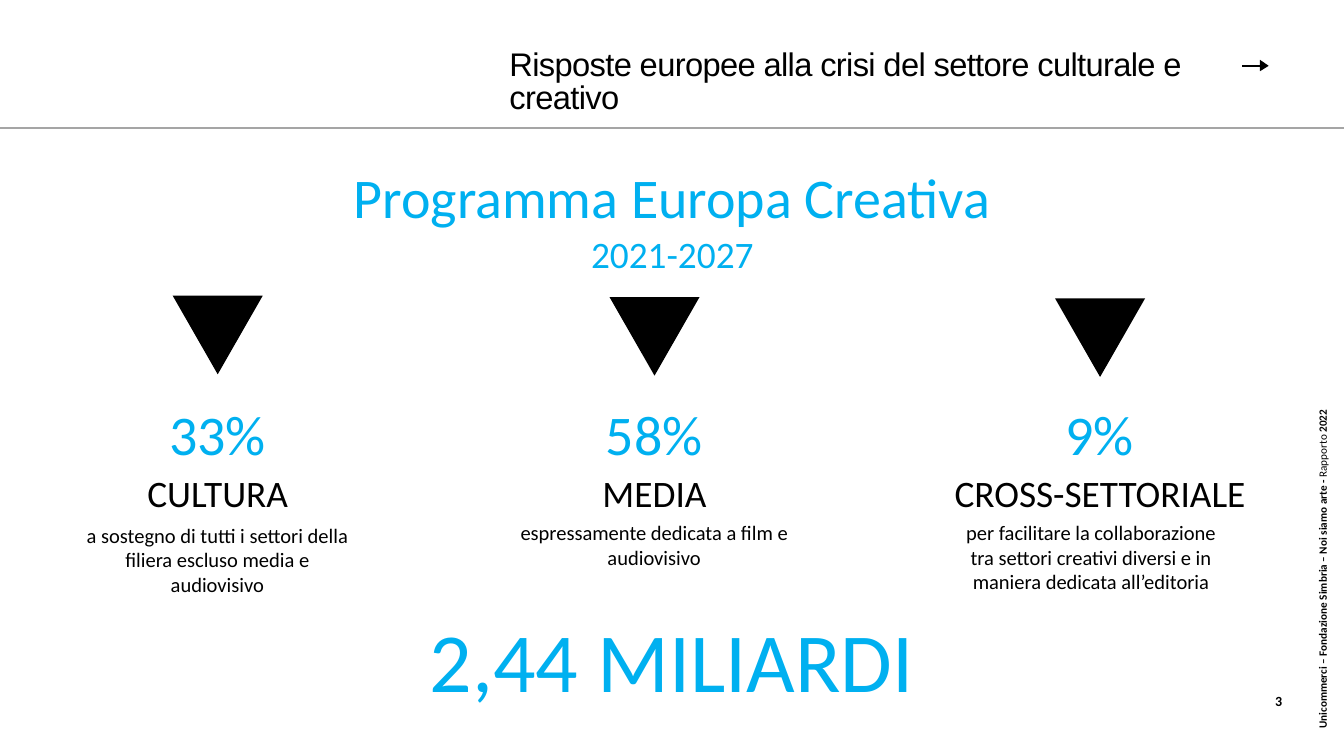
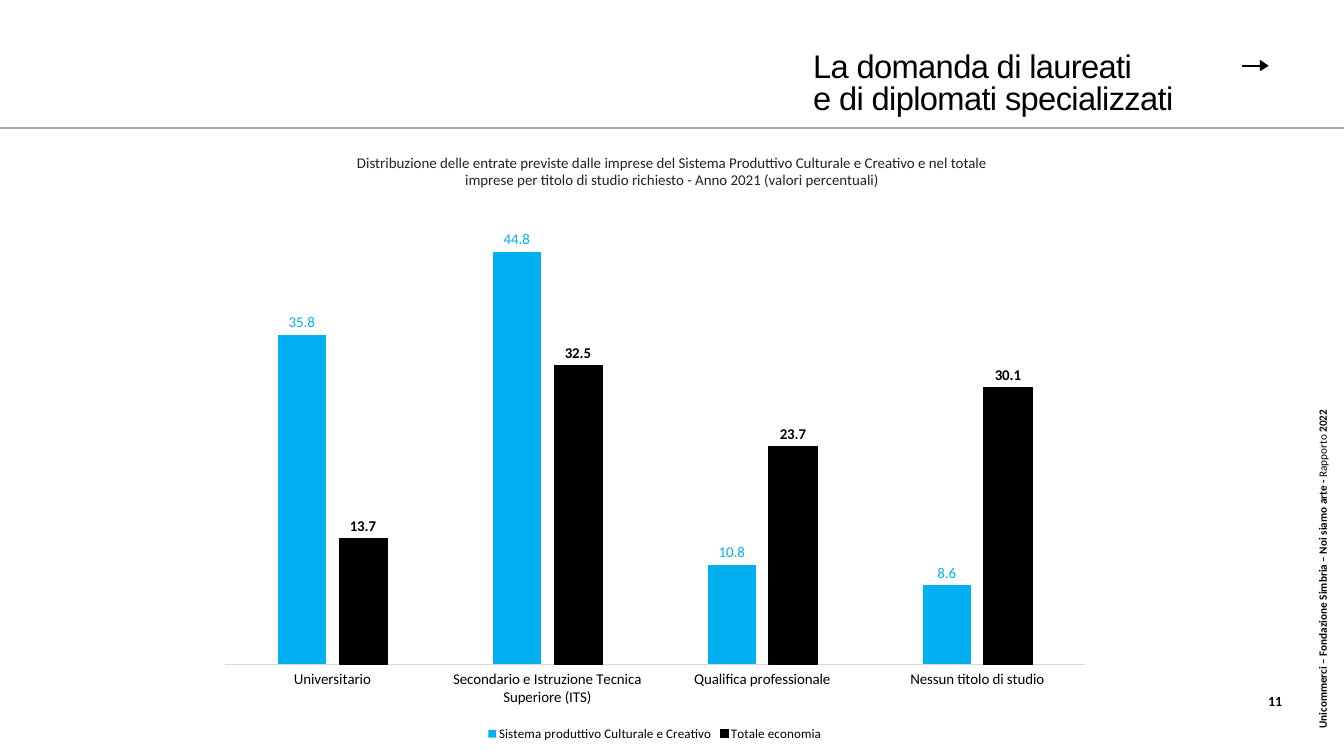
from pptx import Presentation
from pptx.chart.data import CategoryChartData
from pptx.dml.color import RGBColor
from pptx.enum.chart import XL_CHART_TYPE, XL_LABEL_POSITION, XL_LEGEND_POSITION, XL_TICK_LABEL_POSITION, XL_TICK_MARK
from pptx.enum.shapes import MSO_SHAPE
from pptx.enum.text import MSO_ANCHOR, MSO_AUTO_SIZE, PP_ALIGN
from pptx.util import Inches, Pt

BLACK = RGBColor(0x00, 0x00, 0x00)
CYAN = RGBColor(0x00, 0xB0, 0xF0)
DARK_GREY = RGBColor(0x22, 0x22, 0x22)
LIGHT_GREY = RGBColor(0xD9, 0xD9, 0xD9)
TITLE_FONT, BODY_FONT = "Arial", "Calibri"
LEFT, CENTER, RIGHT = PP_ALIGN.LEFT, PP_ALIGN.CENTER, PP_ALIGN.RIGHT
TITLE_ONLY = 5


def add_text(slide, box, runs, size, color=BLACK, align=CENTER):
    """Add a text box of one paragraph; runs holds (text, bold) pairs."""
    holder = slide.shapes.add_textbox(*map(Inches, box))
    frame = holder.text_frame
    frame.word_wrap = True
    frame.auto_size = MSO_AUTO_SIZE.SHAPE_TO_FIT_TEXT
    paragraph = frame.paragraphs[0]
    paragraph.alignment = align
    for text, bold in runs:
        run = paragraph.add_run()
        run.text = text
        for name, value in {"name": BODY_FONT, "size": Pt(size), "bold": bold}.items():
            setattr(run.font, name, value)
        run.font.color.rgb = color
    return holder


def add_outline(shapes, points):
    """Add a closed black freeform through points given in inches."""
    start, *rest = [(Inches(x), Inches(y)) for x, y in points]
    builder = shapes.build_freeform(*start, scale=1.0)
    builder.add_line_segments(rest, close=True)
    outline = builder.convert_to_shape()
    outline.shadow.inherit = False
    outline.fill.solid()
    outline.fill.fore_color.rgb = BLACK
    outline.line.fill.background()
    return outline


prs = Presentation()
prs.slide_width, prs.slide_height = Inches(20), Inches(11.25)

# Shared frame: title, rule, arrow, page number and side footer
headings = [
    ("Risposte europee alla crisi del settore culturale e creativo", (7.58, 0.76, 10.64, 0.98), "3"),
    ("La domanda di laureati\ne di diplomati specializzati", (12.1, 0.78, 6.23, 0.98), "11"),
]
slides = []
for heading, title_box, page in headings:
    slide = prs.slides.add_slide(prs.slide_layouts[TITLE_ONLY])
    slides.append(slide)

    title = slide.shapes.title
    title.left, title.top, title.width, title.height = map(Inches, title_box)
    frame = title.text_frame
    frame.text = heading
    frame.word_wrap = True
    frame.auto_size = MSO_AUTO_SIZE.NONE
    frame.vertical_anchor = MSO_ANCHOR.TOP
    for side in ("left", "top", "right", "bottom"):
        setattr(frame, f"margin_{side}", 0)
    for paragraph in frame.paragraphs:
        paragraph.alignment = LEFT
        paragraph.line_spacing = Pt(34.6)
        run = paragraph.runs[0]
        run.font.name, run.font.size = TITLE_FONT, Pt(35)
        run.font.color.rgb = BLACK
        run.font._element.set("spc", "-70")

    rule = slide.shapes.add_shape(MSO_SHAPE.RECTANGLE, 0, Inches(1.9), prs.slide_width, Inches(0.01))
    rule.shadow.inherit = False
    rule.fill.solid()
    rule.fill.fore_color.rgb = BLACK
    rule.line.fill.background()

    arrow = slide.shapes.add_group_shape()
    add_outline(arrow.shapes, [(18.48, 0.97), (18.77, 0.97), (18.77, 0.99), (18.48, 0.99)])
    add_outline(arrow.shapes, [(18.75, 1.06), (18.75, 0.89), (18.88, 0.98)])

    add_text(slide, (9.62, 10.26, 9.56, 0.35), [(page, True)], 15, align=RIGHT)
    footer = add_text(
        slide, (14.45, 5.56, 10.46, 0.3),
        [("Unicommerci – Fondazione Simbria – Noi siamo arte - ", True), ("Rapporto", False), (" 2022", True)],
        12, align=LEFT)
    footer.rotation = 270

programme, demand = slides

# Slide 1: the programme and its three strands
for text, box, size in [
    ("Programma Europa Creativa", (4, 2.37, 12, 1.11), 60),
    ("2021-2027", (7.46, 3.39, 5.09, 0.77), 40),
    ("2,44 MILIARDI", (4, 9, 12, 1.62), 90),
]:
    add_text(programme, box, [(text, False)], size, CYAN)

strands = [
    (3.24, 4.4, "33%", "CULTURA", 3.03, 7.73, 1.21,
     "a sostegno di tutti i settori della filiera escluso media e audiovisivo"),
    (9.74, 4.42, "58%", "MEDIA", 3.03, 7.69, 0.84,
     "espressamente dedicata a film e audiovisivo"),
    (16.37, 4.44, "9%", "CROSS-SETTORIALE", 6.26, 7.69, 1.58,
     "per facilitare la collaborazione tra settori creativi diversi e in maniera dedicata all’editoria"),
]
for column, (middle, top, share, strand, strand_width, aim_top, aim_height, aim) in enumerate(strands):
    pointer = add_outline(programme.shapes, [(middle, top), (middle + 0.67, top + 1.17), (middle - 0.67, top + 1.17)])
    pointer.rotation = 180
    add_text(programme, (middle - 2.55, 5.9, 5.09, 1.11), [(share, False)], 60, CYAN)
    add_text(programme, (middle - strand_width / 2, 6.95, strand_width, 0.77), [(strand, False)], 40)
    add_text(programme, (1.1 + 6.5 * column, aim_top, 4.27, aim_height), [(aim, False)], 22)

# Slide 2: hires by level of education
add_text(
    demand, (5, 2.23, 10, 0.64),
    [("Distribuzione delle entrate previste dalle imprese del Sistema Produttivo Culturale e Creativo e nel totale "
      "imprese per titolo di studio richiesto - Anno 2021 (valori percentuali)", False)],
    16, DARK_GREY)

hires = CategoryChartData(number_format="0.0")
hires.categories = ["Universitario", "Secondario e Istruzione Tecnica Superiore (ITS)",
                    "Qualifica professionale", "Nessun titolo di studio"]
hires.add_series("Sistema produttivo Culturale e Creativo", (35.8, 44.8, 10.8, 8.6))
hires.add_series("Totale economia", (13.7, 32.5, 23.7, 30.1))
chart = demand.shapes.add_chart(
    XL_CHART_TYPE.COLUMN_CLUSTERED, *map(Inches, (3.08, 2.87, 13.33, 8.21)), hires).chart
chart.has_title = False
chart.has_legend = True
chart.legend.position = XL_LEGEND_POSITION.BOTTOM
chart.legend.include_in_layout = False

levels = chart.category_axis
levels.major_tick_mark = XL_TICK_MARK.NONE
levels.tick_label_position = XL_TICK_LABEL_POSITION.LOW
levels.format.line.color.rgb = LIGHT_GREY
levels.format.line.width = Pt(0.75)
percent = chart.value_axis
percent.visible = False
percent.has_major_gridlines = False
percent.minimum_scale, percent.maximum_scale = 0, 50

columns = chart.plots[0]
columns.gap_width, columns.overlap = 219, -27
columns.vary_by_categories = False
fonts = [(chart.font, 10, BLACK, False), (chart.legend.font, 14, BLACK, False),
         (levels.tick_labels.font, 16, BLACK, False)]
for series, color, bold in zip(columns.series, (CYAN, BLACK), (False, True)):
    series.format.fill.solid()
    series.format.fill.fore_color.rgb = color
    labels = series.data_labels
    labels.show_value = True
    labels.position = XL_LABEL_POSITION.OUTSIDE_END
    fonts.append((labels.font, 16, color, bold))
total_line = columns.series[1].format.line
total_line.color.rgb = BLACK
total_line.width = Pt(0.75)
for font, size, color, bold in fonts:
    font.name, font.size, font.bold = BODY_FONT, Pt(size), bold
    font.color.rgb = color

prs.save("out.pptx")
